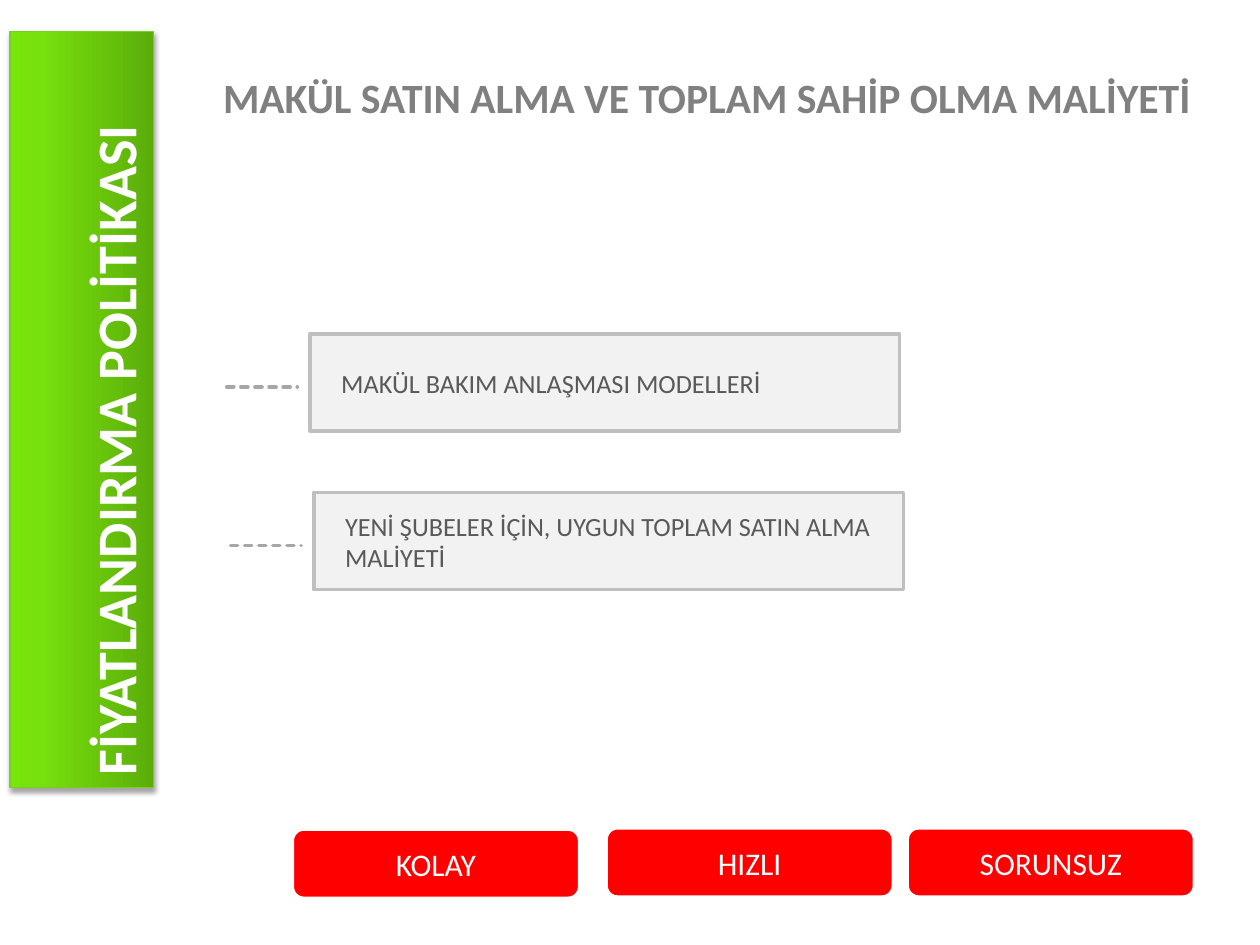
"""Build the pricing policy slide."""
from copy import deepcopy

from lxml.etree import SubElement
from pptx import Presentation
from pptx.dml.color import RGBColor
from pptx.enum.dml import MSO_LINE
from pptx.enum.shapes import MSO_CONNECTOR, MSO_SHAPE
from pptx.enum.text import MSO_ANCHOR, PP_ALIGN
from pptx.oxml.ns import qn
from pptx.util import Inches, Pt

SIDEBAR = "FİYATLANDIRMA POLİTİKASI"
TITLE = "MAKÜL SATIN ALMA VE TOPLAM SAHİP OLMA MALİYETİ"
POLICIES = [
    "MAKÜL BAKIM ANLAŞMASI MODELLERİ",
    "YENİ ŞUBELER İÇİN, UYGUN TOPLAM SATIN ALMA MALİYETİ",
]
BADGES = [("KOLAY", 2.32, 6.58), ("HIZLI", 4.81, 6.57), ("SORUNSUZ", 7.2, 6.57)]
COLORS = {
    "white": "FFFFFF", "title": "808080", "badge": "FF0000",
    "box": "F2F2F2", "border": "BFBFBF", "text": "595959", "dash": "A6A6A6",
    "edge": "78CF22",
}
GRADIENT = [(0, "5CAD0A"), (0.8, "77E10D"), (1, "78E609")]
FONT = "Calibri"


def rgb(name):
    return RGBColor.from_string(COLORS[name])


def box(size):
    return [Inches(v) for v in size]


def write(sp, text, size, color, anchor, align=PP_ALIGN.LEFT, bold=False):
    tf = sp.text_frame
    tf.word_wrap = True
    tf.vertical_anchor = anchor
    p = tf.paragraphs[0]
    p.text = text
    p.alignment = align
    p.font.name, p.font.size, p.font.bold = FONT, Pt(size), bold
    p.font.color.rgb = rgb(color)


def outline(line, color, width):
    line.color.rgb = rgb(color)
    line.width = Pt(width)


def add_box(shapes, kind, size, fill, line):
    sp = shapes.add_shape(kind, *box(size))
    sp.shadow.inherit = False
    sp.fill.solid()
    sp.fill.fore_color.rgb = rgb(fill)
    outline(sp.line, line, 2)
    return sp


def add_sidebar(shapes):
    sp = shapes.add_shape(MSO_SHAPE.RECTANGLE, *box((-2.35, 2.68, 6, 1.14)))
    sp.rotation = 270
    sp.fill.gradient()
    sp.fill.gradient_angle = 90
    stops = sp._element.spPr.find(".//" + qn("a:gsLst"))
    stops.append(deepcopy(stops[-1]))
    for stop, (position, color) in zip(sp.fill.gradient_stops, GRADIENT):
        stop.position = position
        stop.color.rgb = RGBColor.from_string(color)
    outline(sp.line, "edge", 0.75)
    sp.shadow.inherit = False
    effects = sp._element.spPr.find(qn("a:effectLst"))
    shadow = SubElement(effects, qn("a:outerShdw"), blurRad=str(Pt(3.1)),
                        dist=str(Pt(1.8)), dir="5400000", rotWithShape="0")
    black = SubElement(shadow, qn("a:srgbClr"), val="000000")
    SubElement(black, qn("a:alpha"), val="35000")
    write(sp, SIDEBAR, 32, "white", MSO_ANCHOR.BOTTOM, bold=True)


def add_policy(shapes, text, left, top):
    group = shapes.add_group_shape().shapes
    add_box(group, MSO_SHAPE.RECTANGLE, (left, top, 4.68, 0.77), "box", "border")
    label = group.add_textbox(*box((left + 0.15, top + 0.07, 4.37, 0.64)))
    write(label, text, 15, "text", MSO_ANCHOR.MIDDLE)
    y = top + 0.42
    dash = group.add_connector(MSO_CONNECTOR.STRAIGHT,
                               *box((left - 0.66, y, left - 0.1, y)))
    outline(dash.line, "dash", 2)
    dash.line.dash_style = MSO_LINE.SQUARE_DOT
    spPr = dash._element.spPr
    ln = spPr.find(qn("a:ln"))
    ln.set("cap", "rnd")
    ln.find(qn("a:prstDash")).set("val", "sysDash")
    SubElement(spPr, qn("a:effectLst"))


def main():
    prs = Presentation()
    prs.slide_width, prs.slide_height = Inches(10), Inches(7.5)
    s = prs.slides.add_slide(prs.slide_layouts[5])
    shapes = s.shapes

    add_sidebar(shapes)
    title = shapes.title
    title.left, title.top, title.width, title.height = box((1.67, 0.52, 8.08, 0.71))
    write(title, TITLE, 23.8, "title", MSO_ANCHOR.TOP, bold=True)

    for text, left, top in BADGES:
        sp = add_box(shapes, MSO_SHAPE.ROUNDED_RECTANGLE,
                     (left, top, 2.28, 0.55), "badge", "white")
        write(sp, text, 18, "white", MSO_ANCHOR.MIDDLE, PP_ALIGN.CENTER)

    for i, text in enumerate(POLICIES):
        add_policy(shapes, text, 2.46 + 0.03 * i, 2.65 + 1.26 * i)

    prs.save("out.pptx")


if __name__ == "__main__":
    main()
